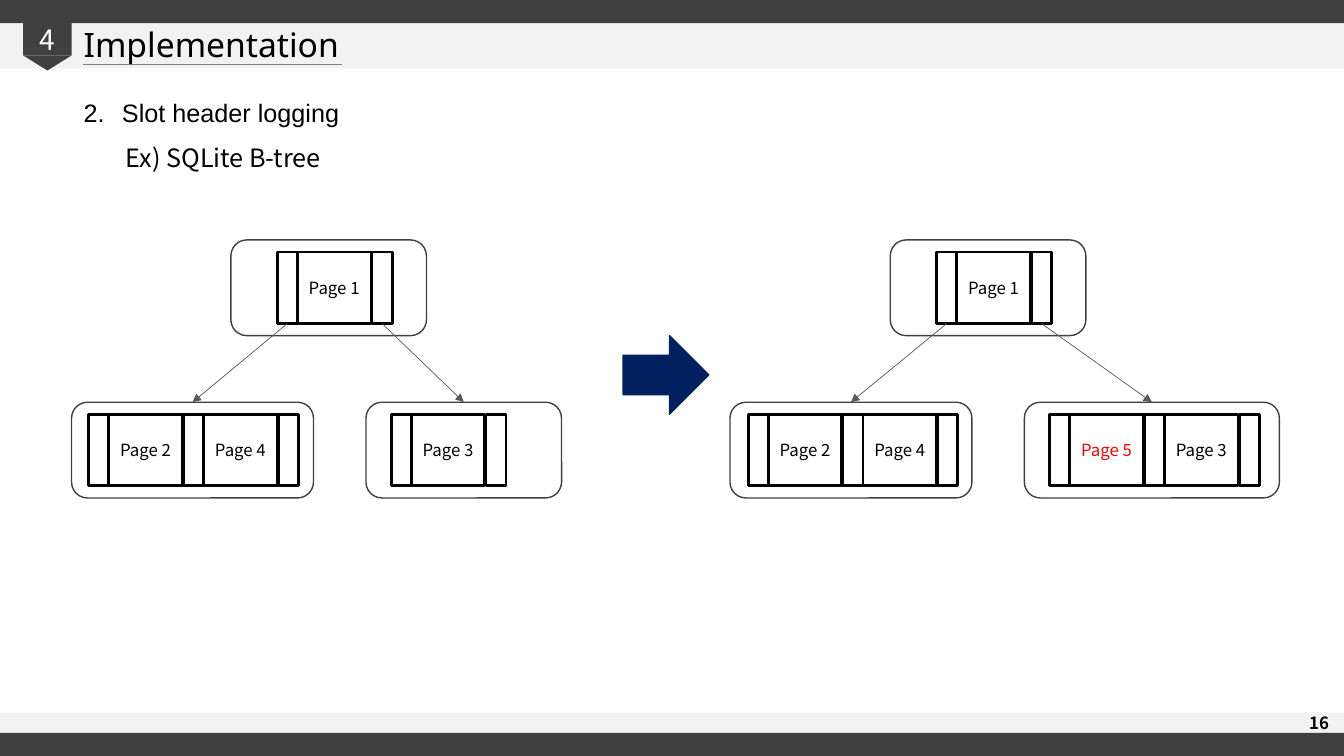
from dataclasses import dataclass

from lxml import etree
from pptx import Presentation
from pptx import slide as sl
from pptx import util as u
from pptx.dml.color import RGBColor
from pptx.enum import shapes, text
from pptx.oxml import ns
from pptx.shapes import autoshape as auto
from pptx.text import text as words

KIND = shapes.MSO_SHAPE
ALIGN = text.PP_ALIGN
MID = text.MSO_ANCHOR.MIDDLE


@dataclass(frozen=True)
class Theme:
    black: str = "000000"
    white: str = "FFFFFF"
    dark: str = "404040"
    pale: str = "F2F2F2"
    rule: str = "808080"
    edge: str = "595959"
    navy: str = "002060"
    red: str = "FF0000"
    sans: str = "Noto Sans"
    cjk: str = "Noto Sans CJK KR"
    arial: str = "Arial"
    head: int = 24
    badge: int = 20
    body: int = 18
    small: int = 12


@dataclass(frozen=True)
class Box:
    left: float
    top: float
    width: float
    height: float

    def emu(self) -> list[u.Length]:
        return [u.Inches(n) for n in (self.left, self.top, self.width, self.height)]


@dataclass(frozen=True)
class Block:
    box: Box
    fill: str
    kind: KIND = KIND.RECTANGLE


@dataclass(frozen=True)
class Node:
    left: float
    width: float
    start: float
    pages: tuple[str, ...]
    fresh: str = ""


@dataclass(frozen=True)
class Tree:
    root: Node
    leaves: tuple[Node, ...]


T = Theme()
WIDE, TALL = 13.33, 7.5
ROOT_TOP, LEAF_TOP = 2.38, 3.99
NODE_H, CELL_H = 0.95, 0.71
SLOT_W, PAGE_W, PITCH = 0.2, 0.73, 0.94

BANDS = (
    Block(Box(0, 7.07, WIDE, 0.23), T.pale),
    Block(Box(0, 7.27, WIDE, 0.23), T.dark),
    Block(Box(0, 0.18, WIDE, 0.5), T.pale),
    Block(Box(0, 0, WIDE, 0.23), T.dark),
    Block(Box(0.23, 0.55, 0.48, 0.15), T.dark, KIND.FLOWCHART_MERGE),
)
BADGE = Block(Box(0.23, 0.22, 0.48, 0.33), T.dark)
ARROW = Block(Box(6.18, 3.33, 0.85, 0.78), T.navy, KIND.RIGHT_ARROW)

TREES = (
    Tree(
        Node(2.29, 1.94, 2.75, ("Page 1",)),
        (
            Node(0.71, 2.4, 0.88, ("Page 2", "Page 4")),
            Node(3.63, 1.94, 3.88, ("Page 3",)),
        ),
    ),
    Tree(
        Node(8.83, 1.94, 9.29, ("Page 1",)),
        (
            Node(7.24, 2.4, 7.42, ("Page 2", "Page 4")),
            Node(10.16, 2.53, 10.41, ("Page 5", "Page 3"), "Page 5"),
        ),
    ),
)


def tint(code: str) -> RGBColor:
    return RGBColor.from_string(code)


def write(frame: words.TextFrame, line: str, size: int, face: str, color: str,
          align: ALIGN = ALIGN.LEFT, bold: bool = False) -> None:
    frame.text = line
    para = frame.paragraphs[0]
    para.alignment = align
    font = para.runs[0].font
    font.size, font.name, font.bold = u.Pt(size), face, bold
    font.color.rgb = tint(color)


def add_shape(page: sl.Slide, kind: KIND, box: Box, fill: str = "",
              line: str = "", weight: float = 1) -> auto.Shape:
    shape = page.shapes.add_shape(kind, *box.emu())
    shape.shadow.inherit = False
    if fill:
        shape.fill.solid()
        shape.fill.fore_color.rgb = tint(fill)
    else:
        shape.fill.background()
    if line:
        shape.line.color.rgb = tint(line)
        shape.line.width = u.Pt(weight)
    else:
        shape.line.fill.background()
    return shape


def add_line(page: sl.Slide, ends: tuple[float, ...], color: str, weight: float):
    link = page.shapes.add_connector(
        shapes.MSO_CONNECTOR.STRAIGHT, *[u.Inches(n) for n in ends])
    link.line.color.rgb = tint(color)
    link.line.width = u.Pt(weight)
    etree.SubElement(link._element.spPr, ns.qn("a:effectLst"))
    return link


def add_text(page: sl.Slide, box: Box, line: str, size: int,
             align: ALIGN, bold: bool = False) -> None:
    frame = page.shapes.add_textbox(*box.emu()).text_frame
    frame.word_wrap = True
    frame.vertical_anchor = MID
    write(frame, line, size, T.cjk, T.black, align, bold)


def fill_holder(holder, box: Box, line: str, size: int, face: str) -> words._Paragraph:
    holder.left, holder.top, holder.width, holder.height = box.emu()
    frame = holder.text_frame
    frame.auto_size = text.MSO_AUTO_SIZE.NONE
    frame.vertical_anchor = text.MSO_ANCHOR.TOP
    write(frame, line, size, face, T.black)
    para = frame.paragraphs[0]
    para.space_before = u.Pt(0)
    return para


def set_number(para: words._Paragraph, start: int) -> None:
    props = para._p.get_or_add_pPr()
    props.set("marL", str(u.Inches(0.38)))
    props.set("indent", str(u.Inches(-0.38)))
    etree.SubElement(props, ns.qn("a:buFont"), typeface=T.arial)
    etree.SubElement(props, ns.qn("a:buAutoNum"), type="arabicPeriod", startAt=str(start))


def draw_node(page: sl.Slide, node: Node, top: float) -> tuple[auto.Shape, list[auto.Shape]]:
    frame = add_shape(page, KIND.ROUNDED_RECTANGLE,
                      Box(node.left, top, node.width, NODE_H), line=T.dark)
    row = top + (NODE_H - CELL_H) / 2
    slots = [
        add_shape(page, KIND.RECTANGLE,
                  Box(node.start + i * PITCH, row, SLOT_W, CELL_H), line=T.black, weight=2)
        for i in range(len(node.pages) + 1)
    ]
    for i, name in enumerate(node.pages):
        left = node.start + i * PITCH + SLOT_W
        cell = add_shape(page, KIND.RECTANGLE, Box(left, row, PAGE_W, CELL_H),
                         line=T.black, weight=2)
        color = T.red if name == node.fresh else T.black
        cell.text_frame.margin_left = cell.text_frame.margin_right = 0
        cell.text_frame.vertical_anchor = MID
        write(cell.text_frame, name, T.small, T.cjk, color, ALIGN.CENTER)
    return frame, slots


def draw_tree(page: sl.Slide, tree: Tree) -> None:
    _, slots = draw_node(page, tree.root, ROOT_TOP)
    for slot, leaf in zip(slots, tree.leaves):
        frame, _ = draw_node(page, leaf, LEAF_TOP)
        link = add_line(page, (0, 0, 1, 1), T.edge, 0.5)
        link.begin_connect(slot, 2)
        link.end_connect(frame, 0)
        etree.SubElement(link.line._get_or_add_ln(), ns.qn("a:tailEnd"), type="triangle")


def main() -> None:
    deck = Presentation()
    deck.slide_width, deck.slide_height = u.Inches(WIDE), u.Inches(TALL)
    page = deck.slides.add_slide(deck.slide_layouts[1])
    title, body = page.placeholders
    for band in BANDS:
        add_shape(page, band.kind, band.box, band.fill)
    badge = add_shape(page, BADGE.kind, BADGE.box, BADGE.fill)
    badge.text_frame.vertical_anchor = MID
    write(badge.text_frame, "4", T.badge, T.cjk, T.white, ALIGN.CENTER)
    page.shapes._spTree.append(title._element)
    fill_holder(title, Box(0.73, 0.19, 3.56, 0.5), "Implementation", T.head, T.sans)
    add_line(page, (0.82, 0.64, 3.39, 0.64), T.rule, 0.75)
    item = fill_holder(body, Box(0.73, 0.92, 5.98, 0.41),
                       "Slot header logging", T.body, T.arial)
    set_number(item, 2)
    add_text(page, Box(1.05, 1.36, 2.33, 0.4), "Ex) SQLite B-tree", T.body, ALIGN.CENTER)
    for tree in TREES:
        draw_tree(page, tree)
    add_shape(page, ARROW.kind, ARROW.box, ARROW.fill, ARROW.fill)
    add_text(page, Box(10.95, 6.97, 2.33, 0.4), "16", T.small, ALIGN.RIGHT, True)
    deck.save("out.pptx")


if __name__ == "__main__":
    main()
